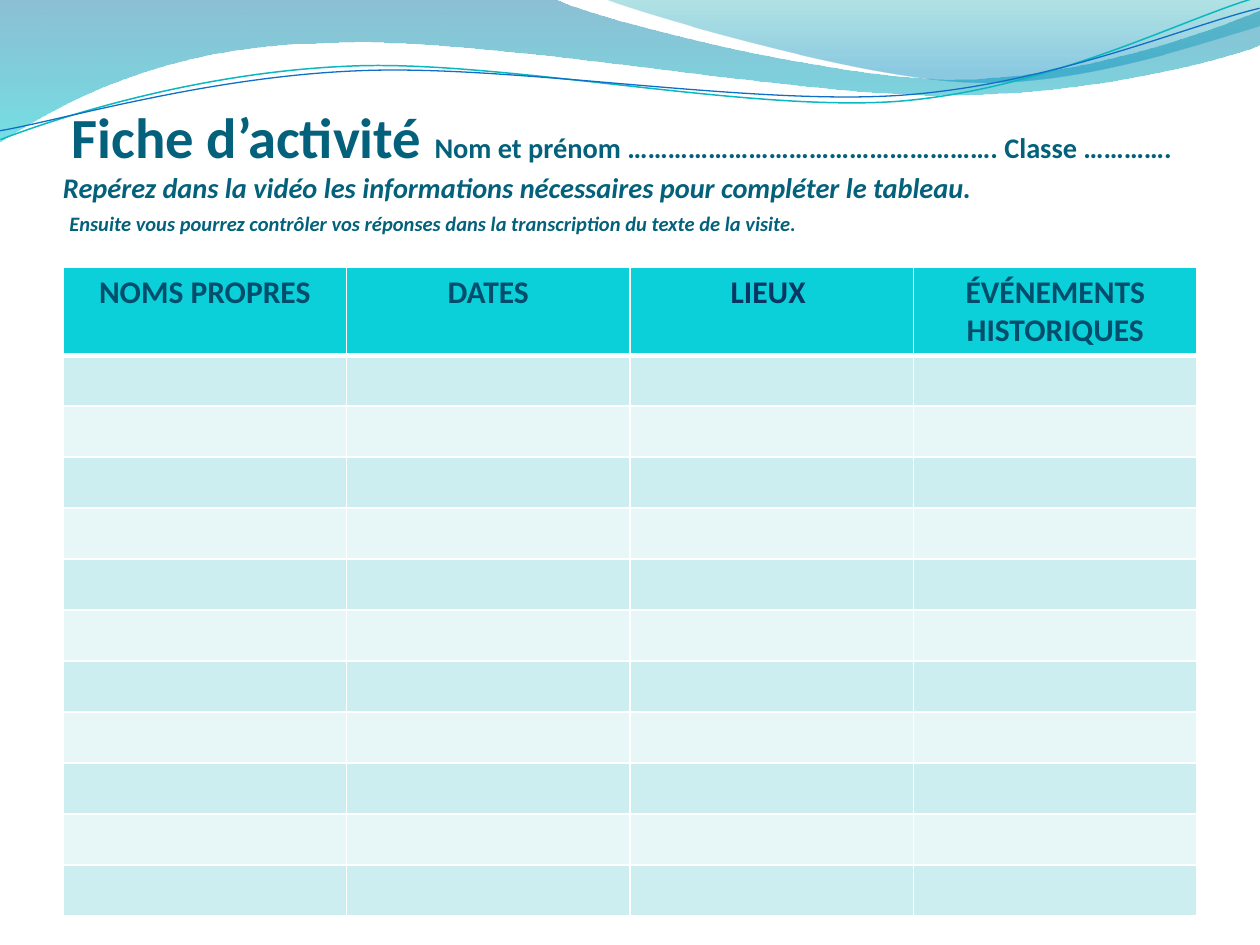
from dataclasses import dataclass

from lxml.etree import SubElement
from pptx import Presentation
from pptx.dml.color import RGBColor as Color
from pptx.enum.text import MSO_ANCHOR as Anchor, PP_ALIGN as Align
from pptx.oxml.ns import qn
from pptx.util import Pt

SCALE = 914400 / 126  # EMU per px


@dataclass(frozen=True)
class Theme:
    font: str = "Calibri"
    title: str = "04617B"
    header_text: str = "004E6C"
    header_accent: str = "083763"
    header_fill: str = "0BD0D9"
    bands: tuple = ("CCEEF1", "E7F7F8")
    border: str = "FFFFFF"
    title_size: float = 32.4
    indent_size: float = 21.6
    body_size: float = 16.2
    note_size: float = 11.7
    table_size: float = 18


THEME = Theme()

# A pair is a straight step; six numbers are a Bézier step.
# Each band has its outline and its (position, colour, opacity) stops.
BANDS = [
    ([(0, 0), (554, -1), (600, 21, 837, 79, 955, 79),
      (1075, 79, 1207, 33, 1260, 11), (1261, 45),
      (1239, 55, 1096, 96, 940, 95), (784, 95, 481, 35, 324, 43),
      (163, 45, 58, 105, -1, 142), (0, 0)],
     [(0, "0074A1", 45), (1, "00C6CF", 55)]),
    ([(604, -1), (641, 14, 859, 78, 969, 82),
      (1079, 87, 1211, 40, 1260, 26), (1260, 0), (604, -1)],
     [(0, "00A1A9", 30), (0.8, "008BBF", 45)]),
]
# Strands are drawn level, then tilted
STRAND_TILT = 357.3
STRANDS = [
    ([(-2, 110), (58, 90, 199, 52, 350, 53), (499, 53, 745, 118, 896, 114),
      (1049, 109, 1184, 45, 1260, 27)], "0AB8BF", 0.85),
    ([(-2, 101), (57, 94, 207, 57, 357, 58), (509, 58, 750, 112, 902, 108),
      (1052, 104, 1188, 52, 1262, 38)], "0F6FC6", 0.75),
]

# Each line is a list of runs: text, size, italic
HEADING = [
    [(" ", THEME.indent_size, True),
     ("Fiche d’activité ", THEME.title_size, False),
     ("Nom et prénom ………………………………………………. Classe ………….",
      THEME.body_size, False)],
    [("Repérez dans la vidéo les informations nécessaires pour compléter "
      "le tableau.", THEME.body_size, True)],
    [(" ", THEME.body_size, True),
     ("Ensuite vous pourrez contrôler vos réponses dans la transcription "
      "du texte de la visite.", THEME.note_size, True)],
]
COLUMNS = [
    ("NOMS PROPRES", THEME.header_text),
    ("DATES", THEME.header_text),
    ("LIEUX ", THEME.header_accent),
    ("ÉVÉNEMENTS HISTORIQUES", THEME.header_text),
]
EMPTY_ROWS = 11


def px(value):
    return round(value * SCALE)


def add_outline(slide, steps, close):
    points = [(px(x), px(y)) for step in steps
              for x, y in zip(step[::2], step[1::2])]
    builder = slide.shapes.build_freeform(*points[0], scale=1.0)
    builder.add_line_segments(points[1:], close=close)
    shape = builder.convert_to_shape()
    shape.shadow.inherit = False
    # Join the three segments of each Bézier step into one curve
    segments = iter(list(shape.element.spPr.iter(qn("a:lnTo"))))
    for step in steps[1:]:
        segment = next(segments)
        if len(step) == 6:
            segment.tag = qn("a:cubicBezTo")
            for _ in range(2):
                extra = next(segments)
                segment.append(extra[0])
                extra.getparent().remove(extra)
    return shape


def add_band(slide, steps, stops):
    shape = add_outline(slide, steps, True)
    shape.line.fill.background()
    shape.fill.gradient()
    shape.fill.gradient_angle = 270
    for stop, (position, color, _) in zip(shape.fill.gradient_stops, stops):
        stop.position = position
        stop.color.rgb = Color.from_string(color)
    # Opacity of each stop
    elements = shape.element.spPr.iter(qn("a:srgbClr"))
    for element, (_, _, opacity) in zip(elements, stops):
        SubElement(element, qn("a:alpha")).set("val", str(opacity * 1000))


def add_strand(slide, steps, color, width):
    shape = add_outline(slide, steps, False)
    shape.rotation = STRAND_TILT
    shape.fill.background()
    shape.line.color.rgb = Color.from_string(color)
    shape.line.width = Pt(width)


def format_run(run, size, color, italic=False):
    font = run.font
    font.name, font.size = THEME.font, Pt(size)
    font.bold, font.italic = True, italic
    font.color.rgb = Color.from_string(color)


def add_heading(slide, left, top, width, height):
    frame = slide.shapes.add_textbox(
        px(left), px(top), px(width), px(height)).text_frame
    frame.word_wrap = True
    frame.vertical_anchor = Anchor.BOTTOM
    frame.margin_left = frame.margin_right = 0
    frame.margin_top, frame.margin_bottom = px(6), px(28)
    paragraph = frame.paragraphs[0]
    paragraph.line_spacing = 0.97
    for index, runs in enumerate(HEADING):
        if index:
            paragraph.add_line_break()
        for text, size, italic in runs:
            run = paragraph.add_run()
            run.text = text
            format_run(run, size, THEME.title, italic)


def style_cell(cell, fill, top=1, bottom=1):
    properties = cell._tc.get_or_add_tcPr()
    for side, width in (("L", 1), ("R", 1), ("T", top), ("B", bottom)):
        line = SubElement(properties, qn(f"a:ln{side}"), w=str(Pt(width)))
        solid = SubElement(line, qn("a:solidFill"))
        SubElement(solid, qn("a:srgbClr"), val=THEME.border)
    cell.fill.solid()
    cell.fill.fore_color.rgb = Color.from_string(fill)


def add_answer_table(slide, left, top, width, height, row_height):
    graphic_frame = slide.shapes.add_table(
        EMPTY_ROWS + 1, len(COLUMNS), px(left), px(top), px(width), px(height))
    table = graphic_frame.table
    for row in table.rows:
        row.height = px(row_height)
    graphic_frame.height = px(height)  # the two-line header takes the rest
    # Header row
    for index, (text, color) in enumerate(COLUMNS):
        cell = table.cell(0, index)
        cell.text_frame.text = text
        paragraph = cell.text_frame.paragraphs[0]
        paragraph.alignment = Align.CENTER
        format_run(paragraph.runs[0], THEME.table_size, color)
        style_cell(cell, THEME.header_fill, bottom=3)
    # Empty rows to fill in
    for row in range(1, EMPTY_ROWS + 1):
        for column in range(len(COLUMNS)):
            style_cell(table.cell(row, column), THEME.bands[(row - 1) % 2],
                       top=3 if row == 1 else 1)


def main():
    presentation = Presentation()
    presentation.slide_width, presentation.slide_height = px(1260), px(945)
    slide = presentation.slides.add_slide(presentation.slide_layouts[6])
    # Wave decoration
    for band in BANDS:
        add_band(slide, *band)
    for strand in STRANDS:
        add_strand(slide, *strand)
    # Content
    add_heading(slide, 63, 97, 1134, 169)
    add_answer_table(slide, 63, 267, 1134, 650, 51)
    presentation.save("out.pptx")


if __name__ == "__main__":
    main()
